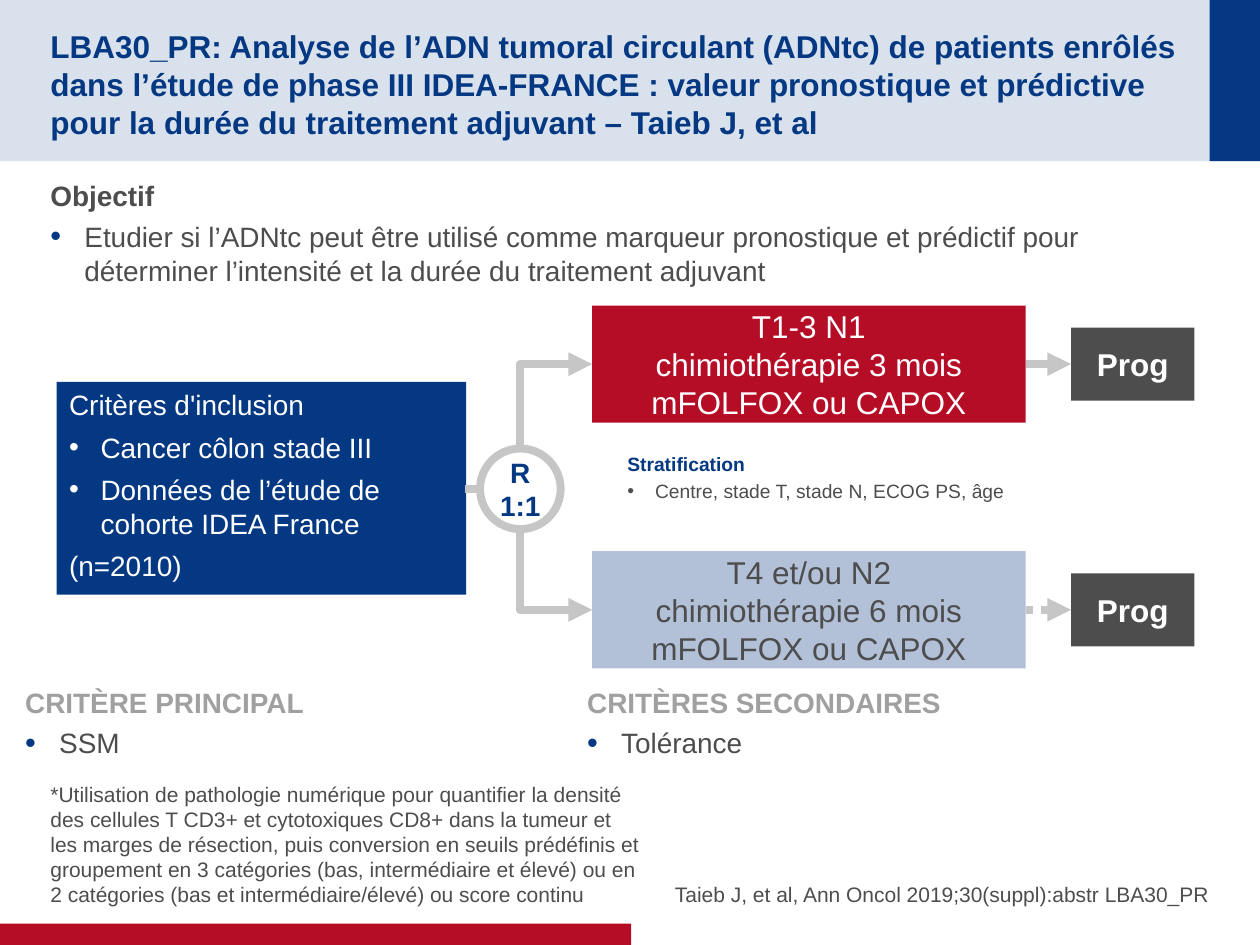
from dataclasses import dataclass

from lxml import etree
from pptx import Presentation
from pptx.dml.color import RGBColor
from pptx.enum.dml import MSO_LINE
from pptx.enum.shapes import MSO_CONNECTOR, MSO_SHAPE
from pptx.enum.text import MSO_ANCHOR, MSO_AUTO_SIZE, PP_ALIGN
from pptx.oxml.ns import qn
from pptx.util import Inches, Pt

RECT, OVAL = MSO_SHAPE.RECTANGLE, MSO_SHAPE.OVAL
STRAIGHT, ELBOW = MSO_CONNECTOR.STRAIGHT, MSO_CONNECTOR.ELBOW
TOP, MIDDLE, BOTTOM = MSO_ANCHOR.TOP, MSO_ANCHOR.MIDDLE, MSO_ANCHOR.BOTTOM
LEFT, CENTER, RIGHT = PP_ALIGN.LEFT, PP_ALIGN.CENTER, PP_ALIGN.RIGHT
DOTTED, NO_FIT = MSO_LINE.ROUND_DOT, MSO_AUTO_SIZE.NONE


@dataclass(frozen=True)
class Theme:
    """Colours, font and type sizes of the slide."""
    font: str = "Arial"
    navy: str = "043882"
    band: str = "D9E1EC"
    red: str = "B60D27"
    pale: str = "B2C0D8"
    dark: str = "4D4D4D"
    grey: str = "A0A0A0"
    line: str = "C6C6C6"
    white: str = "FFFFFF"
    large: int = 18
    medium: int = 16
    note: int = 12
    small: int = 11
    stroke: float = 4.5


T = Theme()


def rgb(color):
    """Turn a hex string into a colour."""
    return RGBColor.from_string(color)


def set_frame(shape, anchor=TOP, insets=(0.1, 0.05, 0.1, 0.05), wrap=True):
    """Set the anchor, insets and wrapping of a text frame and return it."""
    tf = shape.text_frame
    tf.auto_size, tf.word_wrap, tf.vertical_anchor = NO_FIT, wrap, anchor
    tf.margin_left, tf.margin_top, tf.margin_right, tf.margin_bottom = map(Inches, insets)
    return tf


def set_bullet(p, indent, color, percent):
    """Give a paragraph a hanging bullet, or none when the indent is zero."""
    pPr = p._p.get_or_add_pPr()
    pPr.set("marL", str(Inches(indent)))
    pPr.set("indent", str(-Inches(indent)))
    if not indent:
        etree.SubElement(pPr, qn("a:buNone"))
        return
    clr = etree.SubElement(pPr, qn("a:buClr"))
    etree.SubElement(clr, qn("a:srgbClr"), val=color)
    etree.SubElement(pPr, qn("a:buSzPct"), val=str(percent * 1000))
    etree.SubElement(pPr, qn("a:buFont"), typeface=T.font)
    etree.SubElement(pPr, qn("a:buChar"), char="•")


def add_text(tf, text, size, color, bold=False, align=LEFT, after=0,
             indent=0, bullet=None, percent=100):
    """Append a paragraph, with a line break at each newline."""
    p = tf.paragraphs[0]
    if p.runs:
        p = tf.add_paragraph()
    p.alignment, p.space_before, p.space_after = align, Pt(0), Pt(after)
    set_bullet(p, indent, bullet or color, percent)
    for i, line in enumerate(text.split("\n")):
        if i:
            p.add_line_break()
        r = p.add_run()
        r.text = line
        r.font.name, r.font.size, r.font.bold = T.font, Pt(size), bold
        r.font.color.rgb = rgb(color)


def add_section(tf, heading, item, color):
    """Write a bold heading with one bulleted item below it."""
    add_text(tf, heading, T.medium, color, bold=True, after=4)
    add_text(tf, item, T.medium, T.dark, after=4, indent=0.27, bullet=T.navy, percent=110)


def add_box(s, box, fill, kind=RECT):
    """Draw a plain filled shape without a line."""
    sp = s.shapes.add_shape(kind, *map(Inches, box))
    sp.shadow.inherit = False
    sp.fill.solid()
    sp.fill.fore_color.rgb = rgb(fill)
    sp.line.fill.background()
    return sp


def add_label_box(s, box, fill, text, color, bold=False):
    """Draw a filled box with a centred label."""
    sp = add_box(s, box, fill)
    tf = set_frame(sp, MIDDLE, (0.1, 0, 0.1, 0))
    add_text(tf, text, T.large, color, bold, CENTER)
    return sp


def add_text_box(s, box, **frame):
    """Add an empty text box and return its frame."""
    return set_frame(s.shapes.add_textbox(*map(Inches, box)), **frame)


def place(ph, box, **frame):
    """Move a placeholder and return its frame."""
    ph.left, ph.top, ph.width, ph.height = map(Inches, box)
    return set_frame(ph, **frame)


def add_line(s, start, end, kind=STRAIGHT, arrow=True, dash=None):
    """Draw a grey connector, with an arrowhead if wanted."""
    cx = s.shapes.add_connector(kind, *map(Inches, start + end))
    cx.line.color.rgb, cx.line.width = rgb(T.line), Pt(T.stroke)
    if dash:
        cx.line.dash_style = dash
    if arrow:
        etree.SubElement(cx.line._get_or_add_ln(), qn("a:tailEnd"), type="triangle")
    etree.SubElement(cx.element.spPr, qn("a:effectLst"))
    return cx


def add_branch(s, circle, target, start, end):
    """Link the circle to an arm with a vertical, then horizontal, bent arrow."""
    cx = add_line(s, start, end, ELBOW)
    up = end[1] < start[1]
    cx.begin_connect(circle, 0)
    cx.end_connect(target, 1)
    el = cx.element
    el.nvCxnSpPr.cNvCxnSpPr.stCxn.idx = 0 if up else 4
    el.spPr.find(qn("a:prstGeom")).set("prst", "bentConnector2")
    run, rise = end[0] - start[0], abs(end[1] - start[1])
    mid_x, mid_y = (start[0] + end[0]) / 2, (start[1] + end[1]) / 2
    cx.left, cx.top = Inches(mid_x - rise / 2), Inches(mid_y - run / 2)
    cx.width, cx.height = Inches(rise), Inches(run)
    xfrm = el.spPr.find(qn("a:xfrm"))
    xfrm.set("rot", str((90 if up else 270) * 60000))
    xfrm.set("flipH", "1")
    xfrm.set("flipV", "1" if up else "0")


def add_header(s):
    """Draw the bands and write the title and objective."""
    for box, fill in (((0, 0, 10, 1.28), T.band), ((9.6, 0, 0.4, 1.28), T.navy),
                      ((0, 7.33, 5.01, 0.17), T.red)):
        sp = add_box(s, box, fill)
        s.shapes._spTree.insert(2, sp.element) if fill == T.band else None
    tf = place(s.shapes.title, (0.4, 0.2, 9.13, 0.88), anchor=MIDDLE, insets=(0, 0.05, 0, 0))
    add_text(tf, "LBA30_PR: Analyse de l’ADN tumoral circulant (ADNtc) de patients enrôlés "
             "dans l’étude de phase III IDEA-FRANCE : valeur pronostique et prédictive "
             "pour la durée du traitement adjuvant – Taieb J, et al", T.large, T.navy, True)
    tf = place(s.placeholders[1], (0.4, 1.37, 9.2, 5.19), insets=(0, 0.05, 0, 0.05))
    add_section(tf, "Objectif", "Etudier si l’ADNtc peut être utilisé comme marqueur pronostique "
                "et prédictif pour déterminer l’intensité et la durée du traitement adjuvant", T.dark)


def add_inclusion(s):
    """Draw the box of inclusion criteria."""
    tf = set_frame(add_box(s, (0.45, 3.03, 3.25, 1.69), T.navy))
    for text, indent in (("Critères d'inclusion", 0), ("Cancer côlon stade III", 0.25),
                         ("Données de l’étude de cohorte IDEA France", 0.25), ("(n=2010)", 0)):
        add_text(tf, text, T.medium, T.white, after=5, indent=indent)


def add_trial(s):
    """Draw the randomisation circle and both treatment arms."""
    add_line(s, (3.69, 3.88), (3.81, 3.88), arrow=False)
    circle = add_box(s, (3.81, 3.56, 0.64, 0.64), T.white, OVAL)
    circle.line.color.rgb, circle.line.width = rgb(T.line), Pt(T.stroke)
    tf = set_frame(circle, MIDDLE, wrap=False)
    for text in ("R", "1:1"):
        add_text(tf, text, T.medium, T.navy, True, CENTER)
    arms = ((2.89, 3.56, T.red, T.white, "T1-3 N1", 3, None),
            (4.84, 4.2, T.pale, T.dark, "T4 et/ou N2", 6, DOTTED))
    for y, start_y, fill, color, stage, months, dash in arms:
        add_line(s, (8.14, y), (8.5, y), dash=dash)
        text = f"{stage}\nchimiothérapie {months} mois mFOLFOX ou CAPOX"
        arm = add_label_box(s, (4.7, y - 0.465, 3.44, 0.93), fill, text, color)
        add_label_box(s, (8.5, y - 0.29, 0.98, 0.58), T.dark, "Prog", T.white, True)
        add_branch(s, circle, arm, (4.13, start_y), (4.7, y))


def add_notes(s):
    """Write the stratification, endpoints and footnotes."""
    tf = add_text_box(s, (4.88, 3.54, 4.11, 0.98))
    add_text(tf, "Stratification", T.small, T.navy, True, after=2)
    add_text(tf, "Centre, stade T, stade N, ECOG PS, âge", T.small, T.dark, after=2, indent=0.22)
    for x, heading, item in ((0.2, "CRITÈRE PRINCIPAL", "SSM"),
                             (4.66, "CRITÈRES SECONDAIRES", "Tolérance")):
        tf = add_text_box(s, (x, 5.39, 4.52, 0.85), insets=(0, 0.05, 0, 0.05))
        add_section(tf, heading, item, T.grey)
    for x, width, align, text in (
            (0.4, 4.68, LEFT, "*Utilisation de pathologie numérique pour quantifier la densité des "
             "cellules T CD3+ et cytotoxiques CD8+ dans la tumeur et les marges de résection, puis "
             "conversion en seuils prédéfinis et groupement en 3 catégories (bas, intermédiaire et "
             "élevé) ou en 2 catégories (bas et intermédiaire/élevé) ou score continu"),
            (5.08, 4.52, RIGHT, "Taieb J, et al, Ann Oncol 2019;30(suppl):abstr LBA30_PR")):
        tf = add_text_box(s, (x, 6.67, width, 0.53), anchor=BOTTOM, insets=(0, 0, 0, 0))
        add_text(tf, text, T.note, T.dark, align=align)


def main():
    """Build the slide and save it."""
    prs = Presentation()
    prs.slide_width, prs.slide_height = Inches(10), Inches(7.5)
    s = prs.slides.add_slide(prs.slide_layouts[1])
    add_header(s)
    add_inclusion(s)
    add_trial(s)
    add_notes(s)
    prs.save("out.pptx")


if __name__ == "__main__":
    main()
